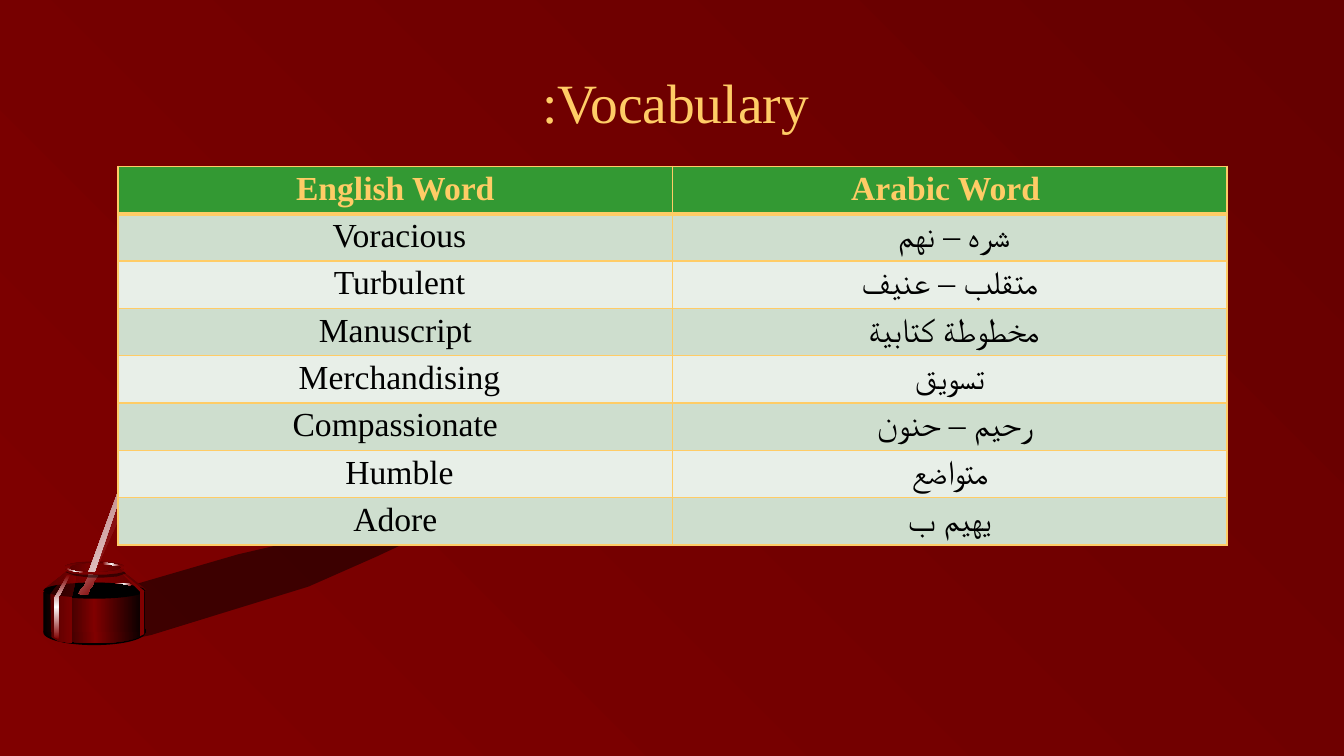
from copy import deepcopy

from lxml import etree
from pptx import Presentation
from pptx import util as u
from pptx.dml.color import RGBColor
from pptx.enum import shapes, text
from pptx.oxml.ns import qn

FONT = "Times New Roman"
COLORS = {
    "red": "800000", "dark red": "660000", "deep red": "590000",
    "rose": "B36666", "soft red": "8D1919", "black": "000000",
    "white": "FFFFFF", "gold": "FFCC66", "green": "339933",
    "dark band": "CEDECE", "light band": "E8EFE8",
}

# Fills: a colour name, (colour, opacity in percent), or ([colours], clockwise angle)
SHADE = ("black", 50)
POT = (["black", "red", "black"], 0)
LID = (["deep red", "red", "deep red"], 90)
NECK = (["deep red", "red", "deep red"], 0)
GLINT = (["red", "white", "red"], 0)

# Outlines are in hundredths of an inch from the corner of the drawing's box
SHADOW = [
    (131, 634), (150, 630), (306, 582), (374, 552), (391, 544), (401, 539), (401, 529),
    (510, 497), (528, 496), (545, 495), (572, 492), (598, 487), (632, 477), (610, 470),
    (640, 474), (658, 470), (638, 462), (666, 467), (687, 460), (667, 451), (699, 455),
    (738, 444), (800, 422), (849, 401), (913, 369), (830, 394), (780, 409), (738, 422),
    (684, 439), (628, 452), (546, 478), (502, 493), (394, 523), (386, 521), (361, 521),
    (236, 550), (133, 580), (138, 585), (140, 584), (134, 635)]
FEATHER = [
    (170, 342), (163, 359), (155, 381), (147, 403), (138, 432), (127, 465), (117, 496),
    (108, 519), (88, 567), (94, 568), (118, 515), (139, 497), (150, 481), (159, 469),
    (137, 468), (160, 466), (163, 461), (141, 459), (164, 459), (167, 450), (143, 450),
    (169, 446), (177, 415), (183, 386), (185, 365), (185, 351), (182, 342), (176, 331)]
QUILL = [(88, 567), (169, 346), (94, 567)]

# Back to front: an ellipse or rectangle has (left, top, width, height)
ELLIPSE, RECT = shapes.MSO_SHAPE.OVAL, shapes.MSO_SHAPE.RECTANGLE
INKWELL = [
    (ELLIPSE, (43, 615, 101, 25), "black"),
    (ELLIPSE, (44, 614, 101, 24), POT),
    (ELLIPSE, (64, 557, 62, 15), "red"),
    (ELLIPSE, (64, 557, 60, 12), LID),
    (None, [(43, 585), (69, 565), (119, 565), (145, 585)], NECK),
    (RECT, (43, 587, 101, 40), POT),
    (ELLIPSE, (43, 578, 101, 16), "black"),
    (None, [(66, 570), (50, 589), (51, 632), (58, 636), (65, 637), (71, 638), (71, 593),
            (76, 572), (74, 572), (69, 571)], (["deep red", "red"], 0)),
    (ELLIPSE, (69, 559, 51, 8), NECK),
    (ELLIPSE, (44, 578, 97, 15), SHADE),
    (None, [(54, 593), (54, 632), (58, 634), (58, 594), (58, 592), (60, 589), (69, 571),
            (67, 570), (56, 590)], (["red", "white", "red"], 90)),
    (None, [(143, 586), (143, 629), (139, 631), (139, 587), (121, 569), (122, 569)], "red"),
    (None, [(102, 558), (110, 559), (115, 560), (119, 561), (118, 562), (114, 561),
            (108, 560), (103, 560)], GLINT),
    (None, [(114, 578), (122, 578), (127, 579), (131, 580), (129, 581), (126, 580),
            (120, 579), (115, 579)], GLINT),
    (None, [(83, 568), (75, 567), (70, 566), (66, 565), (67, 564), (71, 566),
            (77, 567), (82, 567)], GLINT),
    (None, [(88, 570), (97, 571), (93, 577), (92, 581), (89, 584), (88, 588), (87, 590),
            (82, 590), (78, 589), (80, 585), (84, 581), (85, 577), (87, 574)],
     (["rose", "red"], 45)),
    (None, [(65, 567), (71, 569), (81, 570), (94, 570), (106, 570), (116, 569), (121, 568),
            (123, 567), (125, 569), (116, 572), (103, 573), (88, 573), (74, 571),
            (66, 568)], SHADE),
    (None, FEATHER, (["red", "soft red"], 45)),
]

WORDS = [
    ("English Word", "Arabic Word "),
    ("Voracious ", "شره – نهم "),
    ("Turbulent ", "متقلب – عنيف"),
    ("Manuscript", "مخطوطة كتابية "),
    ("Merchandising ", "تسويق"),
    ("Compassionate", "رحيم – حنون "),
    ("Humble ", "متواضع"),
    ("Adore", "يهيم ب"),
]


def rgb(name):
    return RGBColor.from_string(COLORS[name])


def set_gradient(fill, element, names, angle):
    fill.gradient()
    fill.gradient_angle = -angle % 360
    stop_list = element.find(".//" + qn("a:gsLst"))
    for _ in names[2:]:
        stop_list.insert(1, deepcopy(stop_list[0]))
    for index, (stop, name) in enumerate(zip(fill.gradient_stops, names)):
        stop.position = index / (len(names) - 1)
        stop.color.rgb = rgb(name)


def paint(shape, style):
    shape.shadow.inherit = False
    shape.line.fill.background()
    if isinstance(style, tuple) and isinstance(style[0], list):
        set_gradient(shape.fill, shape._element, *style)
        return
    name, opacity = style if isinstance(style, tuple) else (style, 100)
    shape.fill.solid()
    shape.fill.fore_color.rgb = rgb(name)
    if opacity < 100:
        color = shape._element.spPr.find(".//" + qn("a:srgbClr"))
        etree.SubElement(color, qn("a:alpha")).set("val", str(opacity * 1000))


def draw_part(parent, box, kind, geometry, style):
    left, top = box[:2]
    if kind is None:
        outline = parent.build_freeform(*geometry[0], scale=u.Inches(0.01))
        outline.add_line_segments(geometry[1:], close=True)
        shape = outline.convert_to_shape(u.Inches(left), u.Inches(top))
    else:
        x, y, width, height = (value / 100 for value in geometry)
        shape = parent.add_shape(kind, u.Inches(left + x), u.Inches(top + y),
                                 u.Inches(width), u.Inches(height))
    paint(shape, style)


def draw_inkwell(page, box):
    draw_part(page.shapes, box, None, SHADOW, SHADE)
    group = page.shapes.add_group_shape()
    for part in INKWELL:
        draw_part(group.shapes, box, *part)
    draw_part(page.shapes, box, None, QUILL, (["red", "white"], 45))


def format_text(para, size, color, bold=False, right_to_left=False):
    para.alignment = text.PP_ALIGN.CENTER
    if right_to_left:
        para._p.get_or_add_pPr().set("rtl", "1")
    for span in para.runs:
        span.font.name = FONT
        span.font.size = u.Pt(size)
        span.font.bold = bold
        span.font.color.rgb = rgb(color)
        etree.SubElement(span._r.get_or_add_rPr(), qn("a:cs")).set("typeface", FONT)


def place_title(page, box):
    title = page.shapes.title
    title.left, title.top, title.width, title.height = map(u.Inches, box)
    title.text_frame.text = "Vocabulary:"
    title.text_frame.vertical_anchor = text.MSO_ANCHOR.MIDDLE
    format_text(title.text_frame.paragraphs[0], 39.6, "gold", right_to_left=True)


def set_borders(cell, widths):
    properties = cell._tc.get_or_add_tcPr()
    for index, (side, width) in enumerate(zip("LRTB", widths)):
        line = etree.Element(qn("a:ln" + side), w=str(u.Pt(width)))
        fill = etree.SubElement(line, qn("a:solidFill"))
        etree.SubElement(fill, qn("a:srgbClr")).set("val", COLORS["gold"])
        properties.insert(index, line)


def place_table(page, box):
    table = page.shapes.add_table(len(WORDS), 2, *map(u.Inches, box)).table
    table.horz_banding = False
    for row, words in enumerate(WORDS):
        header = row == 0
        band = "green" if header else "dark band" if row % 2 else "light band"
        for column, word in enumerate(words):
            cell = table.cell(row, column)
            cell.text_frame.text = word
            cell.margin_top = cell.margin_bottom = u.Inches(0.04)
            format_text(cell.text_frame.paragraphs[0], 24, "gold" if header else "black",
                        bold=header, right_to_left=not header)
            cell.fill.solid()
            cell.fill.fore_color.rgb = rgb(band)
            set_borders(cell, (1, 1, 3 if row == 1 else 1, 3 if header else 1))


def main():
    deck = Presentation()
    deck.slide_width, deck.slide_height = u.Inches(13.33), u.Inches(7.5)
    page = deck.slides.add_slide(deck.slide_layouts[5])
    set_gradient(page.background.fill, page._element, ["red", "dark red"], 315)
    draw_inkwell(page, (0, 0, 13.33, 7.5))
    place_title(page, (1.2, 0.62, 11, 0.77))
    place_table(page, (1.17, 1.65, 11, 3.76))
    deck.save("out.pptx")


if __name__ == "__main__":
    main()
